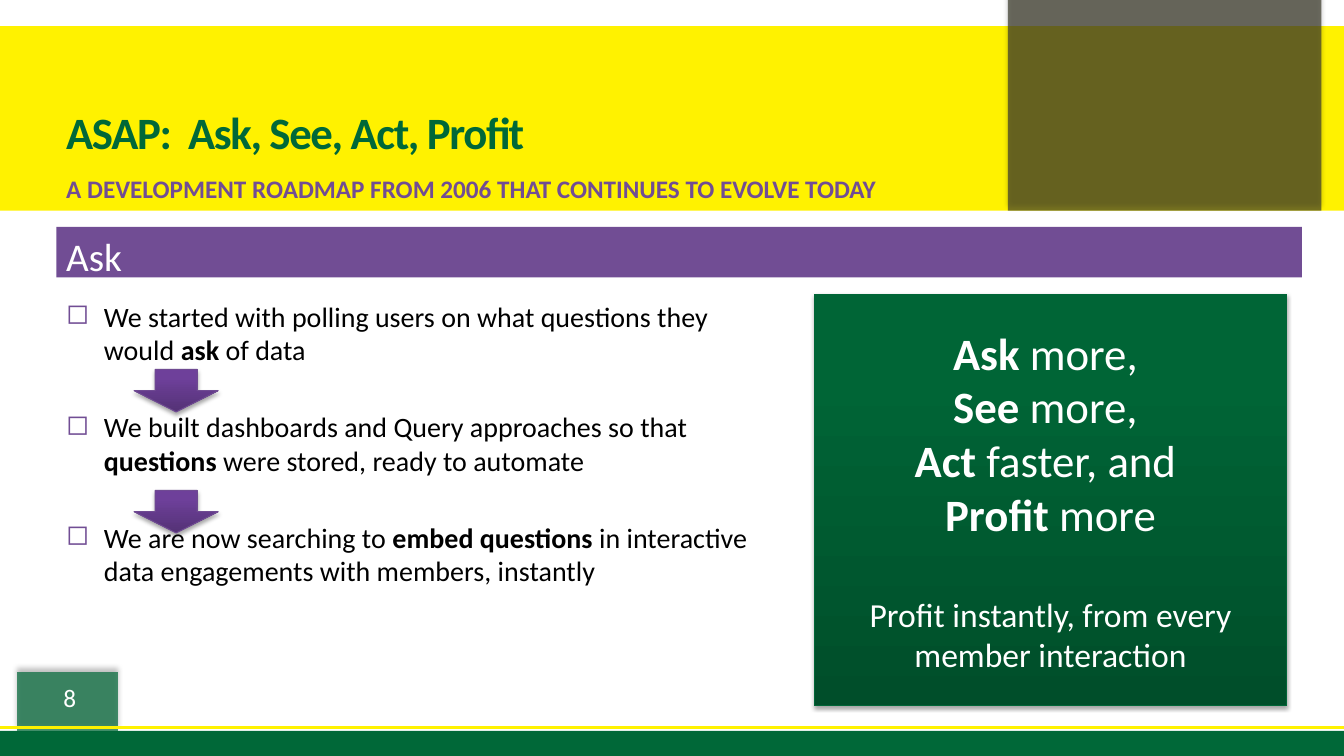
from lxml import etree
from pptx import Presentation
from pptx.dml.color import RGBColor
from pptx.enum.shapes import MSO_CONNECTOR, MSO_SHAPE
from pptx.enum.text import MSO_ANCHOR, PP_ALIGN
from pptx.oxml.ns import qn
from pptx.util import Cm, Pt

RECT, DOWN_ARROW = MSO_SHAPE.RECTANGLE, MSO_SHAPE.DOWN_ARROW
STRAIGHT = MSO_CONNECTOR.STRAIGHT
TOP, MIDDLE, BOTTOM = MSO_ANCHOR.TOP, MSO_ANCHOR.MIDDLE, MSO_ANCHOR.BOTTOM
LEFT, CENTER = PP_ALIGN.LEFT, PP_ALIGN.CENTER

GREEN = RGBColor(0x00, 0x68, 0x38)
GREEN_DARK = RGBColor(0x00, 0x4E, 0x2A)
GREEN_LIGHT = RGBColor(0x00, 0x65, 0x36)
GREEN_EDGE = RGBColor(0x00, 0x66, 0x37)
YELLOW = RGBColor(0xFF, 0xF2, 0x00)
OLIVE = RGBColor(0x3E, 0x3D, 0x2D)
PURPLE = RGBColor(0x71, 0x4D, 0x94)
PURPLE_DARK = RGBColor(0x54, 0x32, 0x76)
PURPLE_LIGHT = RGBColor(0x6E, 0x40, 0x9A)
PURPLE_EDGE = RGBColor(0x6F, 0x4A, 0x92)
WHITE = RGBColor(0xFF, 0xFF, 0xFF)
BLACK = RGBColor(0x00, 0x00, 0x00)

FONT = "Calibri"
SLIDE_W, SLIDE_H = 33.87, 19.05
RAISED = (3.1, 1.8, 90)
GLOW_UP = (4, 3, 270)

ROADMAP = [
    [("We started with polling users on what questions they would ", False),
     ("ask", True), (" of data", False)],
    [("We built dashboards and Query approaches so that ", False),
     ("questions", True), (" were stored, ready to automate", False)],
    [("We are now searching to ", False), ("embed questions ", True),
     ("in interactive data engagements with members, instantly", False)],
]
PROMISES = [("Ask", " more, "), ("See", " more, "), ("Act", " faster, and "), ("Profit", " more")]


def add_child(parent, tag, **attributes):
    """Append a DrawingML element and return it."""
    child = etree.SubElement(parent, qn(tag))
    for key, value in attributes.items():
        child.set(key, str(value))
    return child


def add_panel(slide, box, color, kind=RECT, opacity=None, shadow=None):
    """Add a solid panel without outline, optionally translucent or shadowed."""
    panel = slide.shapes.add_shape(kind, *map(Cm, box))
    panel.fill.solid()
    panel.fill.fore_color.rgb = color
    panel.line.fill.background()
    panel.shadow.inherit = False
    properties = panel._element.spPr
    if opacity:
        add_child(properties.find(".//" + qn("a:srgbClr")), "a:alpha", val=opacity * 1000)
    if shadow:
        blur, distance, angle = shadow
        outer = add_child(properties.find(qn("a:effectLst")), "a:outerShdw", blurRad=Pt(blur),
                          dist=Pt(distance), dir=angle * 60000, rotWithShape=0)
        add_child(add_child(outer, "a:srgbClr", val="000000"), "a:alpha", val=35000)
    return panel


def add_raised(slide, box, dark, light, edge, kind=RECT):
    """Add an outlined, shadowed shape that darkens toward its bottom."""
    raised = add_panel(slide, box, dark, kind, shadow=RAISED)
    raised.fill.gradient()
    raised.fill.gradient_angle = 90
    for stop, color, position in zip(raised.fill.gradient_stops, (dark, light), (0, 0.8)):
        stop.color.rgb = color
        stop.position = position
    raised.line.color.rgb = edge
    raised.line.width = Pt(0.75)
    return raised


def add_text(slide, box):
    """Add a wrapping text box and return its frame."""
    frame = slide.shapes.add_textbox(*map(Cm, box)).text_frame
    frame.word_wrap = True
    return frame


def add_run(paragraph, text, size, color, bold=False):
    """Add one formatted run to a paragraph."""
    run = paragraph.add_run()
    run.text = text
    run.font.name, run.font.size, run.font.bold = FONT, Pt(size), bold
    run.font.color.rgb = color
    return run


def write_line(frame, text, size, color, bold=False, align=LEFT, anchor=TOP):
    """Write a single line into a frame."""
    frame.vertical_anchor = anchor
    frame.paragraphs[0].alignment = align
    return add_run(frame.paragraphs[0], text, size, color, bold)


def header(slide, left, top, width, height):
    """Draw the yellow band with the corner block, title and subtitle."""
    add_panel(slide, (left, top, width, height), YELLOW)
    add_panel(slide, (left + 25.4, 0, 7.9, top + height), OLIVE, opacity=70, shadow=GLOW_UP)
    title = add_text(slide, (left + 1.42, top + 1.68, 23.42, 1.78))
    title_run = write_line(title, "ASAP:  Ask, See, Act, Profit", 32, GREEN, True, anchor=BOTTOM)
    title_run._r.get_or_add_rPr().set("spc", "-100")
    subtitle = add_text(slide, (left + 1.42, top + 3.58, 30.48, 1.07))
    write_line(subtitle, "A DEVELOPMENT ROADMAP FROM 2006 THAT CONTINUES TO EVOLVE TODAY",
               18, PURPLE, True)


def footer(slide, left, top, width, height):
    """Draw the green strip, the yellow rule and the page number tab."""
    add_panel(slide, (left, top, width, height), GREEN)
    add_panel(slide, (left + 0.43, top - 1.48, 2.54, 1.48), GREEN, opacity=70, shadow=GLOW_UP)
    rule_y = Cm(top - 0.08)
    rule = slide.shapes.add_connector(STRAIGHT, Cm(left), rule_y, Cm(left + width), rule_y)
    rule.line.color.rgb = YELLOW
    rule.line.width = Pt(2.25)
    add_child(rule._element.spPr, "a:effectLst")
    page_number = add_text(slide, (left + 0.63, top - 1.35, 2.26, 1.02))
    write_line(page_number, "8", 18, WHITE, align=CENTER)


def section_bar(slide, left, top, width, height):
    """Draw the purple section heading."""
    bar = add_panel(slide, (left, top, width, height), PURPLE)
    bar.text_frame.word_wrap = True
    write_line(bar.text_frame, "Ask", 28, WHITE)


def roadmap(slide, left, top, width, height):
    """List the three stages with an arrow between each pair."""
    frame = add_text(slide, (left, top, width, height))
    for index, stage in enumerate(ROADMAP):
        paragraph = frame.add_paragraph() if index else frame.paragraphs[0]
        if index:
            paragraph.space_before = Pt(31)
        properties = paragraph._p.get_or_add_pPr()
        properties.set("marL", str(Cm(0.95)))
        properties.set("indent", str(Cm(-0.95)))
        add_child(add_child(properties, "a:buClr"), "a:srgbClr", val=PURPLE)
        add_child(properties, "a:buChar", char="◻")
        for text, bold in stage:
            add_run(paragraph, text, 20, BLACK, bold)
    for step in range(len(ROADMAP) - 1):
        add_raised(slide, (left + 1.96, top + 1.9 + step * 3.05, 2.12, 1.07),
                   PURPLE_DARK, PURPLE_LIGHT, PURPLE_EDGE, DOWN_ARROW)


def promise_panel(slide, left, top, width, height):
    """Draw the green panel with the four promises and the closing line."""
    panel = add_raised(slide, (left, top, width, height), GREEN_DARK, GREEN_LIGHT, GREEN_EDGE)
    frame = panel.text_frame
    frame.word_wrap = True
    frame.vertical_anchor = MIDDLE
    promises = frame.paragraphs[0]
    for index, (verb, rest) in enumerate(PROMISES):
        if index:
            promises.add_line_break()
        add_run(promises, verb, 32, WHITE, True)
        add_run(promises, rest, 32, WHITE)
    closing = frame.add_paragraph()
    closing.space_before = Pt(38)
    add_run(closing, "Profit instantly, from every member interaction", 24, WHITE)
    promises.alignment = closing.alignment = CENTER


def main():
    """Build the slide and save it."""
    deck = Presentation()
    deck.slide_width, deck.slide_height = Cm(SLIDE_W), Cm(SLIDE_H)
    slide = deck.slides.add_slide(deck.slide_layouts[6])
    header(slide, 0, 0.66, SLIDE_W, 4.65)
    footer(slide, 0, SLIDE_H - 0.63, SLIDE_W, 0.63)
    section_bar(slide, 1.42, 5.72, 31.39, 1.27)
    roadmap(slide, 1.42, 7.41, 18.1, 8.46)
    promise_panel(slide, 20.52, 7.41, 11.91, 10.37)
    deck.save("out.pptx")


if __name__ == "__main__":
    main()
